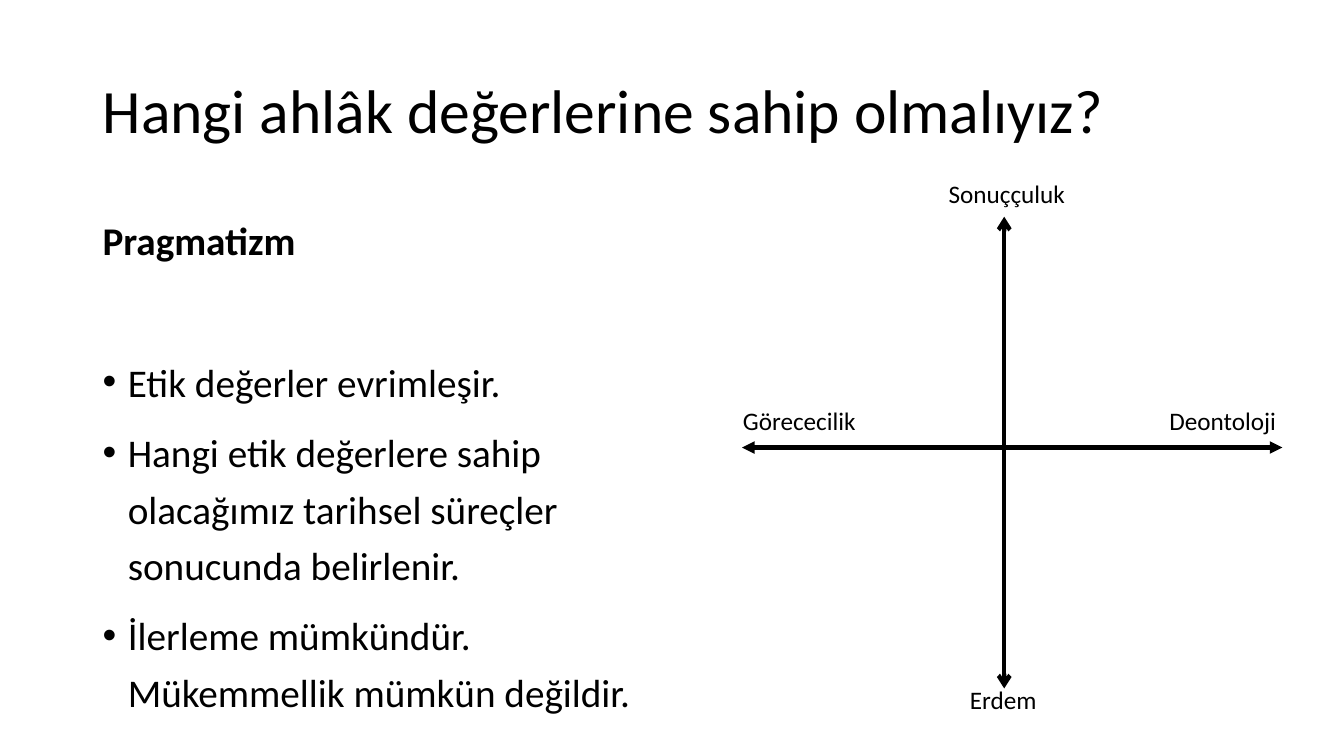
from dataclasses import dataclass

from lxml import etree
from pptx import Presentation
from pptx.dml.color import RGBColor
from pptx.enum.shapes import MSO_CONNECTOR
from pptx.enum.text import MSO_ANCHOR
from pptx.oxml.ns import qn
from pptx.util import Inches, Pt

STRAIGHT = MSO_CONNECTOR.STRAIGHT
TOP, MIDDLE = MSO_ANCHOR.TOP, MSO_ANCHOR.MIDDLE
SLIDE_WIDTH, SLIDE_HEIGHT = 13.33, 7.5
FONT = "Calibri"
INK = "000000"
INDENT = 0.25
LABEL_WIDTH, LABEL_HEIGHT = 10.43, 5.33


@dataclass
class Area:
    """A rectangle in percent of the slide's width and height."""
    left: float
    top: float
    width: float
    height: float


@dataclass
class Line:
    text: str
    size: float
    bold: bool = False
    bullet: bool = False
    spacing: float = 1.0
    before: float = 0


@dataclass
class Axis:
    """End points in percent of the slide, and the arrowhead kind."""
    start: tuple[float, float]
    end: tuple[float, float]
    arrowhead: str


def across(percent: float) -> int:
    return Inches(SLIDE_WIDTH * percent / 100)


def down(percent: float) -> int:
    return Inches(SLIDE_HEIGHT * percent / 100)


def colour(value: str) -> RGBColor:
    return RGBColor.from_string(value)


def add_bullet(para) -> None:
    properties = para._p.get_or_add_pPr()
    properties.set("marL", str(Inches(INDENT)))
    properties.set("indent", str(-Inches(INDENT)))
    font = etree.SubElement(properties, qn("a:buFont"))
    font.set("typeface", "Arial")
    etree.SubElement(properties, qn("a:buChar")).set("char", "•")


def add_text(page, area: Area, lines: list[Line], anchor=TOP) -> None:
    box = page.shapes.add_textbox(across(area.left), down(area.top),
                                  across(area.width), down(area.height))
    frame = box.text_frame
    frame.word_wrap = True
    frame.vertical_anchor = anchor
    for index, line in enumerate(lines):
        para = frame.add_paragraph() if index else frame.paragraphs[0]
        if line.bullet:
            add_bullet(para)
        para.line_spacing = line.spacing
        para.space_before = Pt(line.before)
        span = para.add_run()
        span.text = line.text
        span.font.name = FONT
        span.font.size = Pt(line.size)
        span.font.bold = line.bold
        span.font.color.rgb = colour(INK)


def add_axis(page, axis: Axis) -> None:
    connector = page.shapes.add_connector(
        STRAIGHT, across(axis.start[0]), down(axis.start[1]),
        across(axis.end[0]), down(axis.end[1]))
    connector.line.color.rgb = colour(INK)
    connector.line.width = Pt(3)
    outline = connector.line._get_or_add_ln()
    for end in ("a:headEnd", "a:tailEnd"):
        etree.SubElement(outline, qn(end)).set("type", axis.arrowhead)
    etree.SubElement(connector._element.spPr, qn("a:effectLst"))


TITLE = Line("Hangi ahlâk değerlerine sahip olmalıyız?", 44, spacing=0.9)

# The wide gap sets the heading apart from its points
BODY = [
    Line("Pragmatizm", 28, bold=True, spacing=1.2),
    Line("Etik değerler evrimleşir.", 28, bullet=True, spacing=1.2, before=61),
    Line("Hangi etik değerlere sahip olacağımız tarihsel süreçler "
         "sonucunda belirlenir.", 28, bullet=True, spacing=1.2, before=10),
    Line("İlerleme mümkündür. Mükemmellik mümkün değildir.", 28,
         bullet=True, spacing=1.2, before=10),
]

AXES = [
    Axis((74.72, 28.67), (74.72, 91.07), "arrow"),
    Axis((55.21, 59.2), (95.42, 59.2), "triangle"),
]

LABELS = {
    "Sonuççuluk": (69.84, 22.93),
    "Erdem": (71.42, 89.87),
    "Görececilik": (54.54, 52.93),
    "Deontoloji": (86.27, 52.93),
}


def main() -> None:
    deck = Presentation()
    deck.slide_width = Inches(SLIDE_WIDTH)
    deck.slide_height = Inches(SLIDE_HEIGHT)
    page = deck.slides.add_slide(deck.slide_layouts[6])

    # Title and body
    add_text(page, Area(6.9, 5.33, 86.27, 19.33), [TITLE], MIDDLE)
    add_text(page, Area(6.9, 26.67, 41.71, 71.47), BODY)

    # Crossed axes with a label at each end
    for axis in AXES:
        add_axis(page, axis)
    for text, (left, top) in LABELS.items():
        add_text(page, Area(left, top, LABEL_WIDTH, LABEL_HEIGHT),
                 [Line(text, 18)])

    deck.save("out.pptx")


if __name__ == "__main__":
    main()
